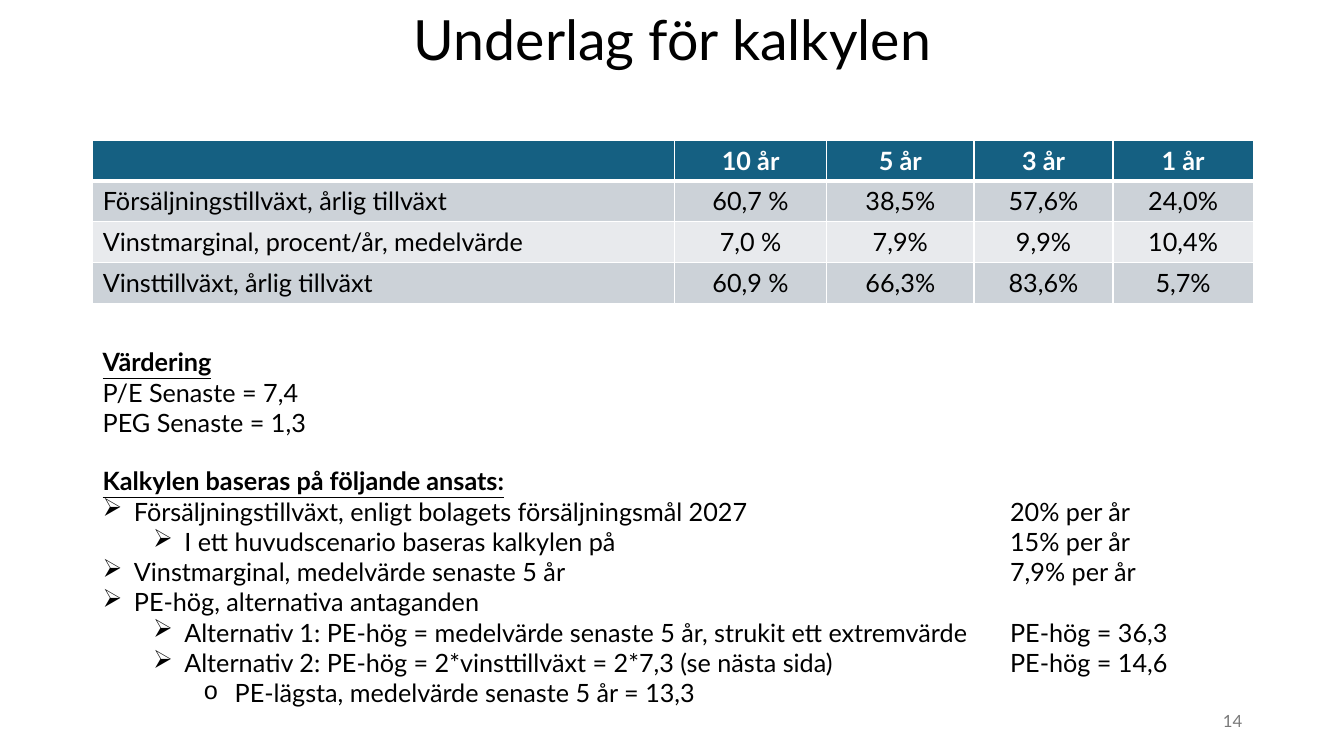
"""Build the slide with the growth table, the valuation and the assumptions behind the estimate."""
from lxml.etree import SubElement
from pptx import Presentation
from pptx.dml.color import RGBColor
from pptx.enum.text import MSO_ANCHOR, PP_ALIGN
from pptx.oxml.ns import qn
from pptx.util import Inches, Pt

FONT = "Lato"
LEFT, WIDTH = 0.92, 11.5
INDENT = 0.31


def style(paragraph, size=18, color="000000", bold=False, underline=False):
    for run in paragraph.runs:
        run.font.name = FONT
        run.font.size = Pt(size)
        run.font.color.rgb = RGBColor.from_string(color)
        run.font.bold = bold
        run.font.underline = underline


def add_text(left, top, width, height, lines, anchor=MSO_ANCHOR.TOP):
    text_frame = slide.shapes.add_textbox(
        Inches(left), Inches(top), Inches(width), Inches(height)).text_frame
    text_frame.word_wrap = True
    text_frame.vertical_anchor = anchor
    text_frame.text = "\n".join(lines)
    for paragraph in text_frame.paragraphs:
        style(paragraph)
    return text_frame.paragraphs


presentation = Presentation()
presentation.slide_width = Inches(13.33)
presentation.slide_height = Inches(7.5)
slide = presentation.slides.add_slide(presentation.slide_layouts[6])

title = add_text(LEFT, 0.1, WIDTH, 0.65, ["Underlag för kalkylen"], MSO_ANCHOR.MIDDLE)[0]
title.alignment = PP_ALIGN.CENTER
title.line_spacing = 0.9
style(title, size=39.6)

growth_rows = [
    ["", "10 år", "5 år", "3 år", "1 år"],
    ["Försäljningstillväxt, årlig tillväxt", "60,7 %", "38,5%", "57,6%", "24,0%"],
    ["Vinstmarginal, procent/år, medelvärde", "7,0 %", "7,9%", "9,9%", "10,4%"],
    ["Vinsttillväxt, årlig tillväxt", "60,9 %", "66,3%", "83,6%", "5,7%"],
]
row_fills = ["156082", "CCD2D8", "E8EAED", "CCD2D8"]
column_widths = [5.77, 1.51, 1.46, 1.38, 1.39]
table = slide.shapes.add_table(
    len(growth_rows), len(column_widths),
    Inches(LEFT), Inches(1.39), Inches(WIDTH), Inches(1.62)).table
for column, width in zip(table.columns, column_widths):
    column.width = Inches(width)

for row_index, (values, fill) in enumerate(zip(growth_rows, row_fills)):
    header = row_index == 0
    table.rows[row_index].height = Inches(0.405)
    for column_index, value in enumerate(values):
        cell = table.cell(row_index, column_index)
        cell.text = value
        paragraph = cell.text_frame.paragraphs[0]
        paragraph.alignment = PP_ALIGN.CENTER if column_index else PP_ALIGN.LEFT
        style(paragraph, color="FFFFFF" if header else "000000", bold=header)
        cell_properties = cell._tc.get_or_add_tcPr()
        for side in "LRTB":
            thick = (side == "B" and header) or (side == "T" and row_index == 1)
            line = SubElement(cell_properties, qn(f"a:ln{side}"), w=str(Pt(3 if thick else 1)))
            line_fill = SubElement(line, qn("a:solidFill"))
            SubElement(line_fill, qn("a:srgbClr"), val="FFFFFF")
        cell.fill.solid()
        cell.fill.fore_color.rgb = RGBColor.from_string(fill)

valuation = add_text(LEFT, 3.39, WIDTH, 1.01,
                     ["Värdering", "P/E Senaste = 7,4", "PEG Senaste = 1,3"])
style(valuation[0], bold=True, underline=True)

assumptions = [
    (0, "Försäljningstillväxt, enligt bolagets försäljningsmål 2027\t20% per år"),
    (1, "I ett huvudscenario baseras kalkylen på\t15% per år"),
    (0, "Vinstmarginal, medelvärde senaste 5 år\t7,9% per år"),
    (0, "PE-hög, alternativa antaganden"),
    (1, "Alternativ 1: PE-hög = medelvärde senaste 5 år, strukit ett extremvärde\tPE-hög = 36,3"),
    (1, "Alternativ 2: PE-hög = 2*vinsttillväxt = 2*7,3 (se nästa sida)\tPE-hög = 14,6"),
    (2, "PE-lägsta, medelvärde senaste 5 år = 13,3"),
]
heading, *bullets = add_text(
    LEFT, 4.57, WIDTH, 2.52,
    ["Kalkylen baseras på följande ansats:"] + [text for _, text in assumptions])
style(heading, bold=True, underline=True)
for paragraph, (level, _) in zip(bullets, assumptions):
    paragraph.level = level
    properties = paragraph._p.get_or_add_pPr()
    properties.set("marL", str(Inches(INDENT + 0.5 * level)))
    properties.set("indent", str(-Inches(INDENT)))
    if level == 2:
        SubElement(properties, qn("a:buFont"), typeface="Courier New")
    SubElement(properties, qn("a:buChar"), char="o" if level == 2 else "➢")
    tab_stops = SubElement(properties, qn("a:tabLst"))
    SubElement(tab_stops, qn("a:tab"), pos=str(Inches(9)), algn="l")

page_number = add_text(9.42, 6.95, 3, 0.4, ["14"], MSO_ANCHOR.MIDDLE)[0]
page_number.alignment = PP_ALIGN.RIGHT
style(page_number, size=12, color="797979")

presentation.save("out.pptx")
